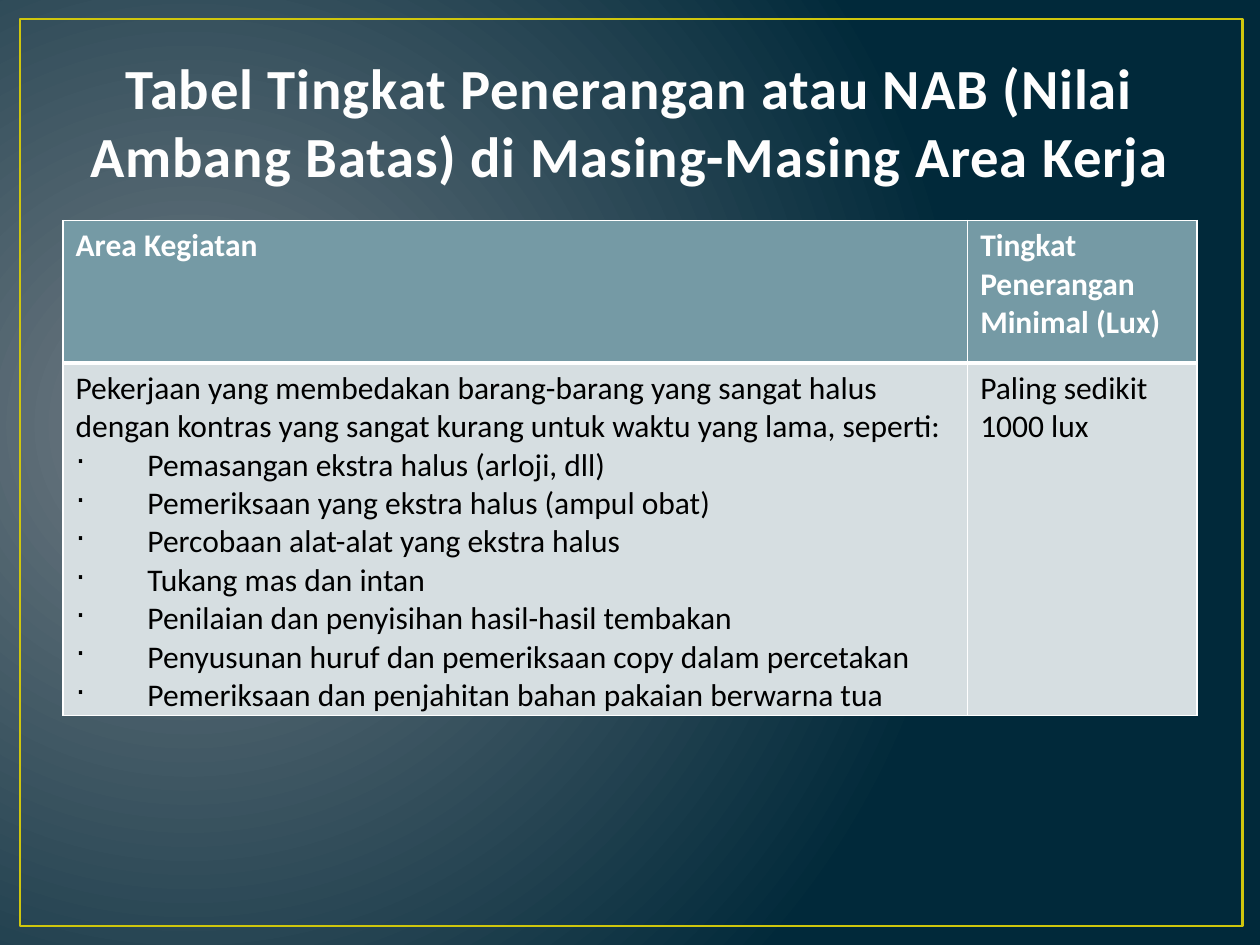
from lxml.etree import SubElement
from pptx import Presentation
from pptx.dml.color import RGBColor
from pptx.enum.shapes import MSO_SHAPE
from pptx.enum.text import MSO_ANCHOR, PP_ALIGN
from pptx.oxml.ns import qn
from pptx.util import Inches, Pt

TITLE = "Tabel Tingkat Penerangan atau NAB (Nilai Ambang Batas) di Masing-Masing Area Kerja"
HEADERS = ["Area Kegiatan", "Tingkat Penerangan Minimal (Lux)"]
INTRODUCTION = (
    "Pekerjaan yang membedakan barang-barang yang sangat halus dengan kontras "
    "yang sangat kurang untuk waktu yang lama, seperti:"
)
ACTIVITIES = [
    "Pemasangan ekstra halus (arloji, dll)",
    "Pemeriksaan yang ekstra halus (ampul obat)",
    "Percobaan alat-alat yang ekstra halus",
    "Tukang mas dan intan",
    "Penilaian dan penyisihan hasil-hasil tembakan",
    "Penyusunan huruf dan pemeriksaan copy dalam percetakan",
    "Pemeriksaan dan penjahitan bahan pakaian berwarna tua",
]
MINIMUM = "Paling sedikit 1000 lux"


def color(value):
    return RGBColor.from_string(value)


def set_attributes(target, values):
    for name, value in values.items():
        setattr(target, name, value)


class SlideBuilder:
    font_name = "Calibri"
    frame_color = "CFC60D"
    border_color = "FFFFFF"
    header_style = {"fill": "759AA5", "text": "FFFFFF", "bold": True, "top": 1, "bottom": 3}
    body_style = {"fill": "D6DEE1", "text": "000000", "bold": False, "top": 3, "bottom": 1}

    def __init__(self, slide):
        self.slide = slide

    def format_font(self, font, size, text_color, bold):
        set_attributes(font, {"name": self.font_name, "size": Pt(size), "bold": bold})
        font.color.rgb = color(text_color)

    def add_line_fill(self, line, value):
        fill = SubElement(line, qn("a:solidFill"))
        SubElement(fill, qn("a:srgbClr"), val=value)

    def background(self, stops, focus):
        fill = self.slide.background.fill
        fill.gradient()
        for stop, (position, value) in zip(fill.gradient_stops, stops):
            stop.position = position
            stop.color.rgb = color(value)
        gradient = self.slide.element.find(".//" + qn("a:gradFill"))
        gradient.remove(gradient.find(qn("a:lin")))
        circle = SubElement(gradient, qn("a:path"), path="circle")
        SubElement(circle, qn("a:fillToRect"), focus)

    def frame(self, left, top, width, height):
        shape = self.slide.shapes.add_shape(
            MSO_SHAPE.RECTANGLE, Inches(left), Inches(top), Inches(width), Inches(height)
        )
        shape.shadow.inherit = False
        shape.fill.background()
        shape.line.color.rgb = color(self.frame_color)
        shape.line.width = Pt(1.5)

    def title(self, text, left, top, width, height):
        box = self.slide.shapes.add_textbox(
            Inches(left), Inches(top), Inches(width), Inches(height)
        )
        set_attributes(box.text_frame, {"word_wrap": True, "vertical_anchor": MSO_ANCHOR.BOTTOM})
        paragraph = box.text_frame.paragraphs[0]
        paragraph.alignment = PP_ALIGN.CENTER
        run = paragraph.add_run()
        run.text = text
        self.format_font(run.font, 32.4, "FEFEFE", True)
        properties = run.font._element
        properties.set("spc", "50")
        outline = properties.makeelement(qn("a:ln"), {"w": str(Pt(1.05))})
        properties.insert(0, outline)
        self.add_line_fill(outline, "384F55")

    def bullet(self, paragraph):
        indent = Inches(0.57)
        properties = paragraph._p.get_or_add_pPr()
        properties.set("marL", str(indent))
        properties.set("indent", str(-indent))
        SubElement(properties, qn("a:buChar"), char="·")

    def cell(self, cell, style, lines):
        cell.fill.solid()
        cell.fill.fore_color.rgb = color(style["fill"])
        for index, text in enumerate(lines):
            frame = cell.text_frame
            paragraph = frame.add_paragraph() if index else frame.paragraphs[0]
            if index:
                self.bullet(paragraph)
            run = paragraph.add_run()
            run.text = text
            self.format_font(run.font, 18, style["text"], style["bold"])
        borders = {"lnL": 1, "lnR": 1, "lnT": style["top"], "lnB": style["bottom"]}
        properties = cell._tc.get_or_add_tcPr()
        for index, (side, width) in enumerate(borders.items()):
            line = properties.makeelement(qn("a:" + side), {"w": str(Pt(width))})
            properties.insert(index, line)
            self.add_line_fill(line, self.border_color)

    def table(self, left, top, widths, heights, rows):
        table = self.slide.shapes.add_table(
            len(heights), len(widths), Inches(left), Inches(top),
            Inches(sum(widths)), Inches(sum(heights)),
        ).table
        for column, width in zip(table.columns, widths):
            column.width = Inches(width)
        for row, height, (style, contents) in zip(table.rows, heights, rows):
            row.height = Inches(height)
            for cell, lines in zip(row.cells, contents):
                self.cell(cell, style, lines)


def main():
    presentation = Presentation()
    set_attributes(presentation, {"slide_width": Inches(10), "slide_height": Inches(7.5)})
    builder = SlideBuilder(presentation.slides.add_slide(presentation.slide_layouts[6]))
    builder.background(
        [(0, "717C84"), (1, "01293A")],
        {"l": "15000", "t": "50000", "r": "85000", "b": "60000"},
    )
    builder.frame(0.16, 0.15, 9.7, 7.2)
    builder.title(TITLE, 0.5, 0.3, 9, 1.25)
    builder.table(
        0.5, 1.75, [7.18, 1.82], [1.13, 2.8],
        [
            (builder.header_style, [[header] for header in HEADERS]),
            (builder.body_style, [[INTRODUCTION, *ACTIVITIES], [MINIMUM]]),
        ],
    )
    presentation.save("out.pptx")


if __name__ == "__main__":
    main()
